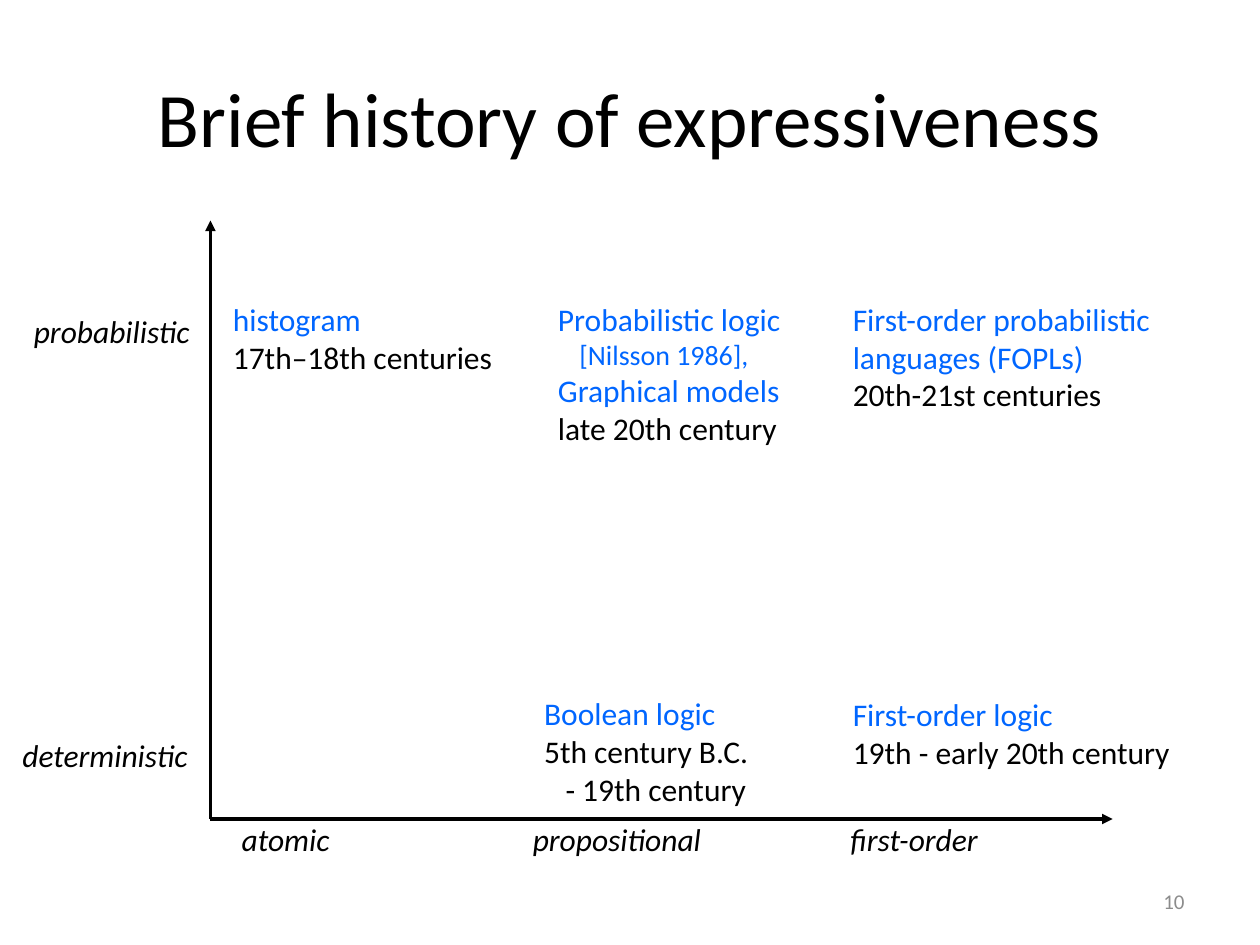
import pptx
import pptx.dml.color
import pptx.enum.dml
import pptx.enum.shapes
import pptx.enum.text
import pptx.oxml.ns
import pptx.util
import lxml.etree

Inches = pptx.util.Inches
ALIGN = pptx.enum.text.PP_ALIGN
MIDDLE = pptx.enum.text.MSO_ANCHOR.MIDDLE
COLORS = {"ink": "000000", "blue": "0066FF", "gray": "8C8C8C"}
FONT = "Calibri"


def write(para, text, size=18, color="ink", slant=False, align=None, inset=0):
    run = para.add_run()
    run.text = text
    run.font.name = FONT
    run.font.size = pptx.util.Pt(size)
    run.font.italic = slant
    run.font.color.rgb = pptx.dml.color.RGBColor.from_string(COLORS[color])
    if align is not None:
        para.alignment = align
    if inset:
        para._p.get_or_add_pPr().set("marL", str(Inches(inset)))


class Sketch:
    def __init__(self, deck):
        self.slide = deck.slides.add_slide(deck.slide_layouts[5])
        self.width = pptx.util.Pt(2)

    def title(self, text, left, top, width, height):
        shape = self.slide.shapes.title
        shape.left, shape.top = Inches(left), Inches(top)
        shape.width, shape.height = Inches(width), Inches(height)
        shape.text_frame.vertical_anchor = MIDDLE
        write(shape.text_frame.paragraphs[0], text, size=44, align=ALIGN.CENTER)

    def label(self, lines, left, top, width, height, wrap=False, anchor=None):
        box = self.slide.shapes.add_textbox(
            Inches(left), Inches(top), Inches(width), Inches(height))
        frame = box.text_frame
        frame.word_wrap = wrap
        if anchor is not None:
            frame.vertical_anchor = anchor
        for index, (text, style) in enumerate(lines):
            para = frame.add_paragraph() if index else frame.paragraphs[0]
            write(para, text, **style)

    def arrow(self, start, end):
        line = self.slide.shapes.add_connector(
            pptx.enum.shapes.MSO_CONNECTOR.STRAIGHT,
            *(Inches(value) for value in start + end))
        line.line.width = self.width
        line.line.color.rgb = pptx.dml.color.RGBColor.from_string(COLORS["ink"])
        tag = pptx.oxml.ns.qn
        lxml.etree.SubElement(
            line.line._get_or_add_ln(), tag("a:tailEnd"), type="triangle")
        lxml.etree.SubElement(line._element.spPr, tag("a:effectLst"))


def main():
    deck = pptx.Presentation()
    deck.slide_width, deck.slide_height = Inches(10), Inches(7.5)
    page = Sketch(deck)
    page.title("Brief history of expressiveness", 0.5, 0.3, 9, 1.25)

    corner = (1.67, 6.5)
    for end in ((1.67, 1.75), (8.83, 6.5)):
        page.arrow(corner, end)

    for text, left, top, width in (
        ("deterministic", 0.08, 5.79, 1.6),
        ("probabilistic", 0.17, 2.43, 1.52),
        ("atomic", 1.82, 6.46, 0.94),
        ("propositional", 4.13, 6.46, 1.62),
        ("first-order", 6.65, 6.46, 1.27),
    ):
        page.label([(text, {"slant": True})], left, top, width, 0.4)

    blue, ink = {"color": "blue"}, {}
    page.label([("histogram", blue), ("17th–18th centuries", ink)],
               1.75, 2.33, 2.4, 0.7)
    page.label([("Probabilistic logic", blue),
                ("[Nilsson 1986],", {"color": "blue", "size": 16, "inset": 0.17}),
                ("Graphical models", blue),
                ("late 20th century", ink)],
               4.33, 2.33, 2.25, 1.3, wrap=True)
    page.label([("First-order probabilistic languages (FOPLs)", blue),
                ("20th-21st centuries", ink)],
               6.67, 2.33, 2.83, 1, wrap=True)
    page.label([("Boolean logic", blue),
                ("5th century B.C.", ink),
                ("- 19th century", {"inset": 0.17})],
               4.22, 5.46, 1.83, 1.01)
    page.label([("First-order logic", blue), ("19th - early 20th century", ink)],
               6.67, 5.47, 2.9, 0.7)

    page.label([("10", {"size": 12, "color": "gray", "align": ALIGN.RIGHT})],
               7.17, 6.95, 2.33, 0.4, wrap=True, anchor=MIDDLE)
    deck.save("out.pptx")


if __name__ == "__main__":
    main()
